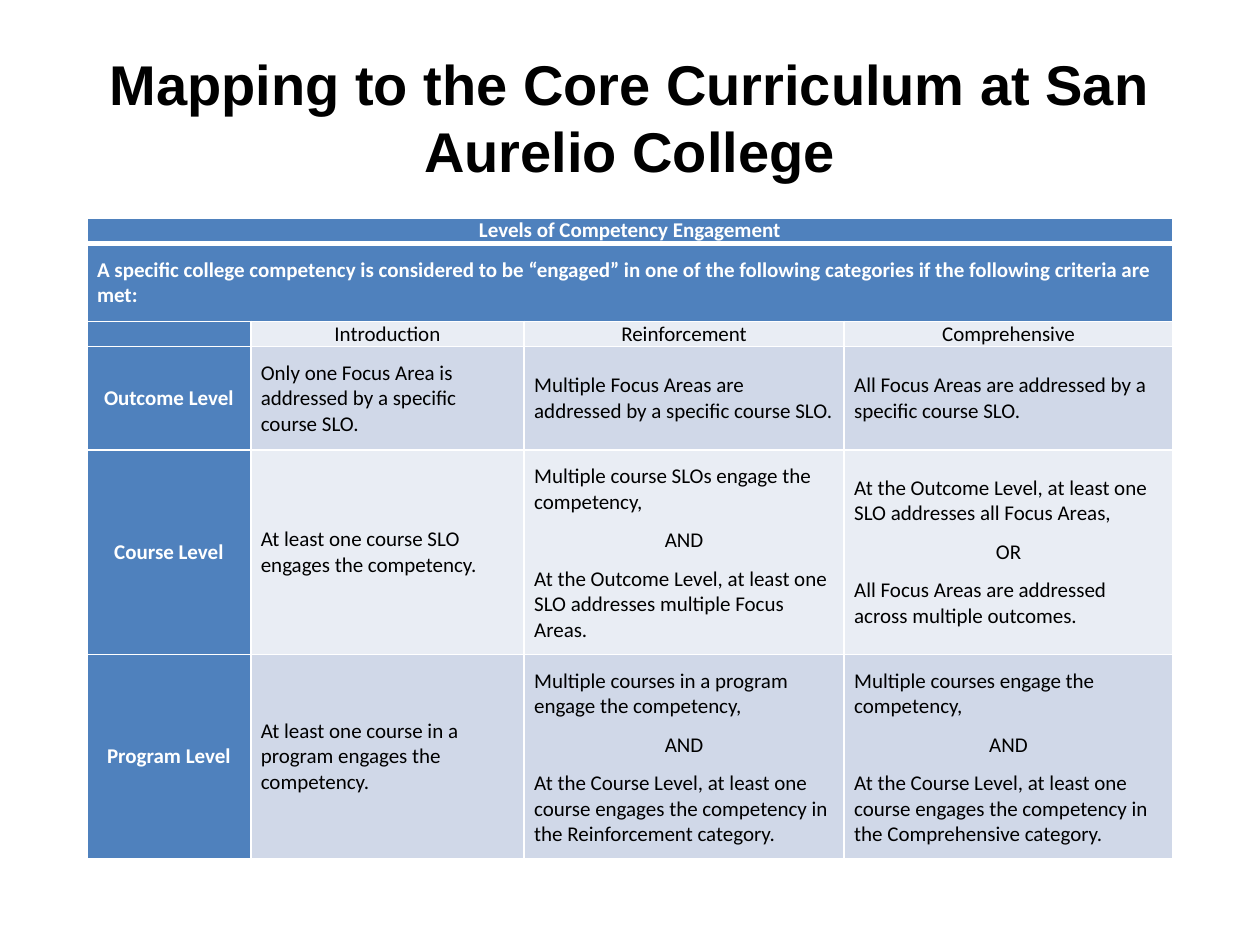
from dataclasses import dataclass

from lxml.etree import SubElement
from pptx import Presentation
from pptx.dml.color import RGBColor
from pptx.enum.text import MSO_ANCHOR, PP_ALIGN
from pptx.oxml.ns import qn
from pptx.util import Inches, Pt


@dataclass(frozen=True)
class Theme:
    blue: str = "4F81BD"
    light: str = "E9EDF4"
    shaded: str = "D0D8E8"
    white: str = "FFFFFF"
    black: str = "000000"
    title_font: str = "Arial"
    table_font: str = "Calibri"
    title_size: int = 32
    table_size: int = 12
    paragraph_gap: float = 7.3


theme = Theme()


def style_paragraph(paragraph, font_name, size, color, bold, alignment):
    paragraph.alignment = alignment
    for run in paragraph.runs:
        run.font.name = font_name
        run.font.size = Pt(size)
        run.font.bold = bold
        run.font.color.rgb = RGBColor.from_string(color)


def set_borders(cell, widths):
    """Draw white borders; widths maps each side (L, R, T, B) to points."""
    properties = cell._tc.get_or_add_tcPr()
    for side, width in widths.items():
        line = SubElement(properties, qn(f"a:ln{side}"), w=str(Pt(width)))
        fill = SubElement(line, qn("a:solidFill"))
        SubElement(fill, qn("a:srgbClr"), val=theme.white)


presentation = Presentation()
presentation.slide_width = Inches(10)
presentation.slide_height = Inches(7.5)
slide = presentation.slides.add_slide(presentation.slide_layouts[6])

# Title
title = slide.shapes.add_textbox(Inches(0.5), Inches(0.3), Inches(9), Inches(1.25))
title_frame = title.text_frame
title_frame.word_wrap = True
title_frame.vertical_anchor = MSO_ANCHOR.MIDDLE
title_frame.text = "Mapping to the Core Curriculum at San Aurelio College"
style_paragraph(title_frame.paragraphs[0], theme.title_font, theme.title_size,
                theme.black, True, PP_ALIGN.CENTER)

# Competency table: each cell is text whose lines are paragraphs
rows = [
    ["Levels of Competency Engagement", "", "", ""],
    ["A specific college competency is considered to be “engaged” in one of the "
     "following categories if the following criteria are met:", "", "", ""],
    ["", "Introduction", "Reinforcement", "Comprehensive"],
    ["Outcome Level",
     "Only one Focus Area is addressed by a specific course SLO.",
     "Multiple Focus Areas are addressed by a specific course SLO.",
     "All Focus Areas are addressed by a specific course SLO."],
    ["Course Level",
     "At least one course SLO engages the competency.",
     "Multiple course SLOs engage the competency,\nAND\n"
     "At the Outcome Level, at least one SLO addresses multiple Focus Areas.",
     "At the Outcome Level, at least one SLO addresses all Focus Areas,\nOR\n"
     "All Focus Areas are addressed across multiple outcomes."],
    ["Program Level",
     "At least one course in a program engages the competency.",
     "Multiple courses in a program engage the competency,\nAND\n"
     "At the Course Level, at least one course engages the competency "
     "in the Reinforcement category.",
     "Multiple courses engage the competency,\nAND\n"
     "At the Course Level, at least one course engages the competency "
     "in the Comprehensive category."],
]
column_widths = [1.3, 2.17, 2.54, 2.61]
row_heights = [0.2, 0.59, 0.2, 0.79, 1.58, 1.58]
HEADING_ROW, CRITERIA_ROW, CATEGORY_ROW = range(3)

table = slide.shapes.add_table(
    len(rows), len(column_widths), Inches(0.69), Inches(1.73),
    Inches(sum(column_widths)), Inches(sum(row_heights))).table
for column, width in zip(table.columns, column_widths):
    column.width = Inches(width)
for table_row, height in zip(table.rows, row_heights):
    table_row.height = Inches(height)
for row in (HEADING_ROW, CRITERIA_ROW):
    table.cell(row, 0).merge(table.cell(row, len(column_widths) - 1))

for row, texts in enumerate(rows):
    band = theme.shaded if row % 2 else theme.light
    padding = 0 if row in (HEADING_ROW, CATEGORY_ROW) else 0.11
    for column, text in enumerate(texts):
        cell = table.cell(row, column)
        is_header = row <= CRITERIA_ROW or column == 0
        set_borders(cell, {"L": 1, "R": 1,
                           "T": 3 if row == CRITERIA_ROW else 1,
                           "B": 3 if row == HEADING_ROW else 1})
        cell.fill.solid()
        cell.fill.fore_color.rgb = RGBColor.from_string(theme.blue if is_header else band)
        if cell.is_spanned:
            continue
        cell.vertical_anchor = MSO_ANCHOR.MIDDLE
        cell.margin_left = cell.margin_right = Inches(0.08)
        cell.margin_top = cell.margin_bottom = Inches(padding)
        cell.text_frame.text = text
        is_label = row != CRITERIA_ROW and (is_header or row == CATEGORY_ROW)
        for index, paragraph in enumerate(cell.text_frame.paragraphs):
            centered = is_label or paragraph.text in ("AND", "OR")
            style_paragraph(paragraph, theme.table_font, theme.table_size,
                            theme.white if is_header else theme.black, is_header,
                            PP_ALIGN.CENTER if centered else PP_ALIGN.LEFT)
            if index:
                paragraph.space_before = Pt(theme.paragraph_gap)
            if not text:  # keeps the empty corner cell from stretching its row
                SubElement(paragraph._p, qn("a:endParaRPr"), sz=str(theme.table_size * 100))

presentation.save("out.pptx")
